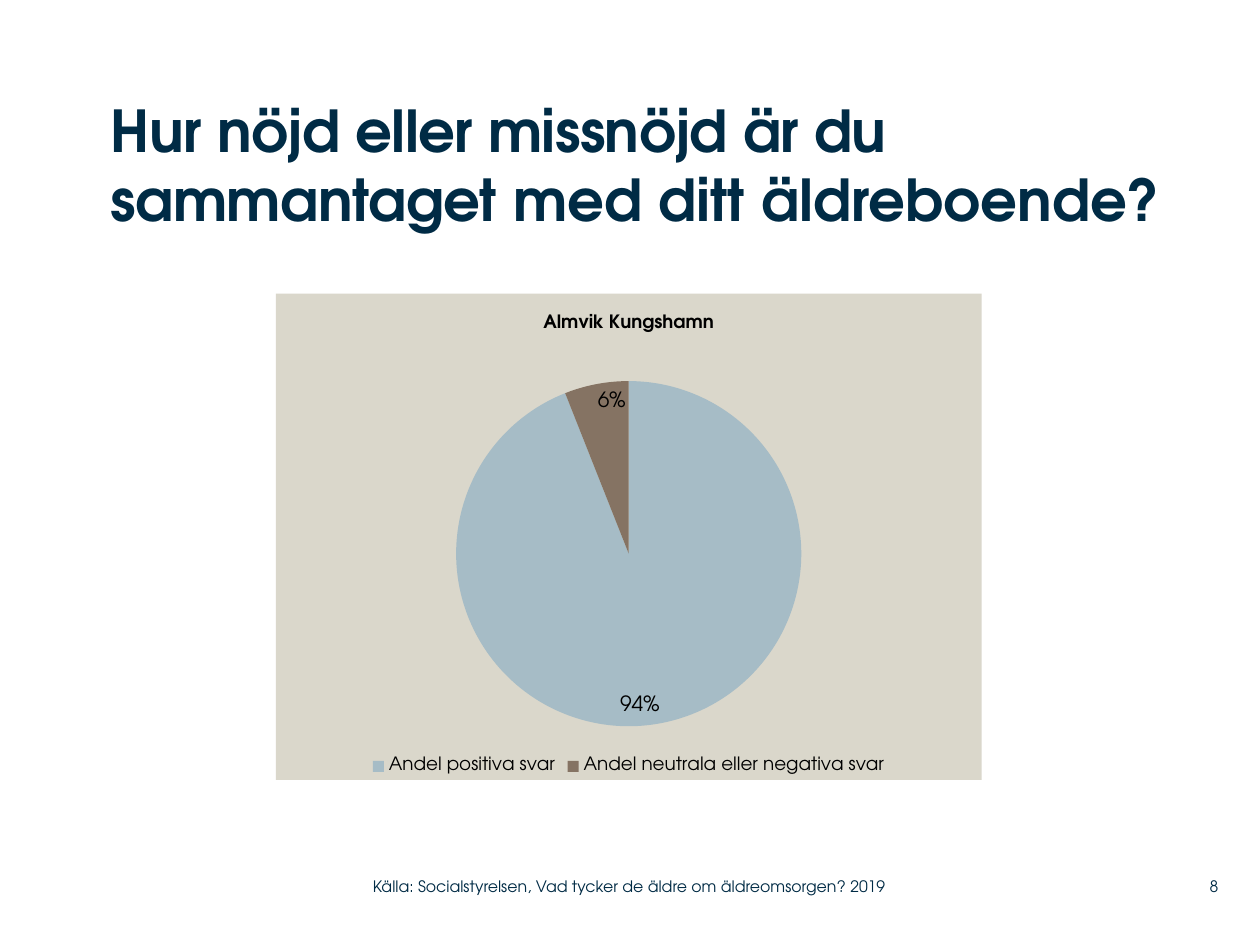
from lxml import etree
from pptx import Presentation
from pptx.chart.data import CategoryChartData
from pptx.dml.color import RGBColor
from pptx.enum.chart import XL_CHART_TYPE as ChartType
from pptx.enum.chart import XL_LABEL_POSITION as LabelPosition
from pptx.enum.chart import XL_LEGEND_POSITION as LegendPosition
from pptx.enum.text import MSO_ANCHOR as Anchor
from pptx.enum.text import PP_ALIGN as Align
from pptx.oxml import parse_xml
from pptx.oxml.ns import nsdecls, qn
from pptx.util import Inches, Pt

FONT = "TeX Gyre Adventor"
NAVY = RGBColor(0x00, 0x2B, 0x45)
BLACK = RGBColor(0x00, 0x00, 0x00)
BEIGE = RGBColor(0xDA, 0xD7, 0xCB)
BLUE = RGBColor(0xA6, 0xBC, 0xC6)
BROWN = RGBColor(0x85, 0x73, 0x63)

ANSWERS = [
    ("Andel positiva svar", 94, BLUE),
    ("Andel neutrala eller negativa svar", 6, BROWN),
]


def style_font(font, size, color, bold=False):
    font.name = FONT
    font.size = Pt(size)
    font.bold = bold
    font.color.rgb = color


def add_text(page, area, parts, size, bold=False, align=Align.LEFT, anchor=Anchor.MIDDLE):
    """Add one paragraph made of the given parts and return its runs."""
    frame = page.shapes.add_textbox(*map(Inches, area)).text_frame
    frame.word_wrap = True
    frame.vertical_anchor = anchor
    frame.margin_left = frame.margin_right = frame.margin_top = frame.margin_bottom = 0
    para = frame.paragraphs[0]
    para.alignment = align
    spans = []
    for part in parts:
        span = para.add_run()
        span.text = part
        style_font(span.font, size, NAVY, bold)
        spans.append(span)
    return spans


def add_title(page, area):
    parts = ["Hur nöjd eller missnöjd är du sammantaget ", "med ditt äldreboende?"]
    spans = add_text(page, area, parts, 33, bold=True, anchor=Anchor.TOP)
    spans[0].font._element.set("spc", "-30")


def fill_chart_area(chart, color):
    properties = parse_xml(
        f'<c:spPr {nsdecls("c", "a")}><a:solidFill><a:srgbClr val="{color}"/></a:solidFill>'
        "<a:ln><a:noFill/></a:ln></c:spPr>"
    )
    chart._chartSpace.find(qn("c:chart")).addnext(properties)


def place_plot(chart, x, y, width, height):
    """Fix the inner plot area, in fractions of the chart."""
    plot_area = chart._chartSpace.find(qn("c:chart")).find(qn("c:plotArea"))
    old_layout = plot_area.find(qn("c:layout"))
    if old_layout is not None:
        plot_area.remove(old_layout)
    layout = etree.Element(qn("c:layout"))
    manual = etree.SubElement(layout, qn("c:manualLayout"))
    settings = [("layoutTarget", "inner"), ("xMode", "edge"), ("yMode", "edge"),
                ("x", x), ("y", y), ("w", width), ("h", height)]
    for tag, value in settings:
        etree.SubElement(manual, qn(f"c:{tag}")).set("val", str(value))
    plot_area.insert(0, layout)


def add_answer_chart(page, area):
    data = CategoryChartData()
    data.categories = [name for name, _, _ in ANSWERS]
    data.add_series("Series 1", [value for _, value, _ in ANSWERS])
    chart = page.shapes.add_chart(ChartType.PIE, *map(Inches, area), data).chart
    style_font(chart.font, 18, BLACK)
    fill_chart_area(chart, BEIGE)
    place_plot(chart, 0.25, 0.18, 0.5, 0.71)

    title = chart.chart_title.text_frame
    title.text = "Almvik Kungshamn"
    style_font(title.paragraphs[0].runs[0].font, 10.5, BLACK, bold=True)

    chart.has_legend = True
    chart.legend.position = LegendPosition.BOTTOM
    chart.legend.include_in_layout = False
    style_font(chart.legend.font, 10.5, BLACK)

    plot = chart.plots[0]
    plot.vary_by_categories = True
    for index, (_, _, color) in enumerate(ANSWERS):
        fill = plot.series[0].points[index].format.fill
        fill.solid()
        fill.fore_color.rgb = color

    plot.has_data_labels = True
    labels = plot.data_labels
    labels.show_value = False
    labels.show_percentage = True
    labels.number_format = "0%"
    labels.number_format_is_linked = False
    labels.position = LabelPosition.INSIDE_END
    style_font(labels.font, 12, BLACK)


def add_footer(page, top, height):
    source = "Källa: Socialstyrelsen, Vad tycker de äldre om äldreomsorgen? 2019"
    add_text(page, (2.96, top, 4.43, height), [source], 9)
    add_text(page, (9.2, top, 0.47, height), ["8"], 9, align=Align.RIGHT)


def main():
    deck = Presentation()
    deck.slide_width = Inches(10)
    deck.slide_height = Inches(7.5)
    page = deck.slides.add_slide(deck.slide_layouts[6])
    add_title(page, (0.88, 0.75, 8.83, 1.42))
    add_answer_chart(page, (2.19, 2.33, 5.6, 3.86))
    add_footer(page, 6.89, 0.29)
    deck.save("out.pptx")


if __name__ == "__main__":
    main()
